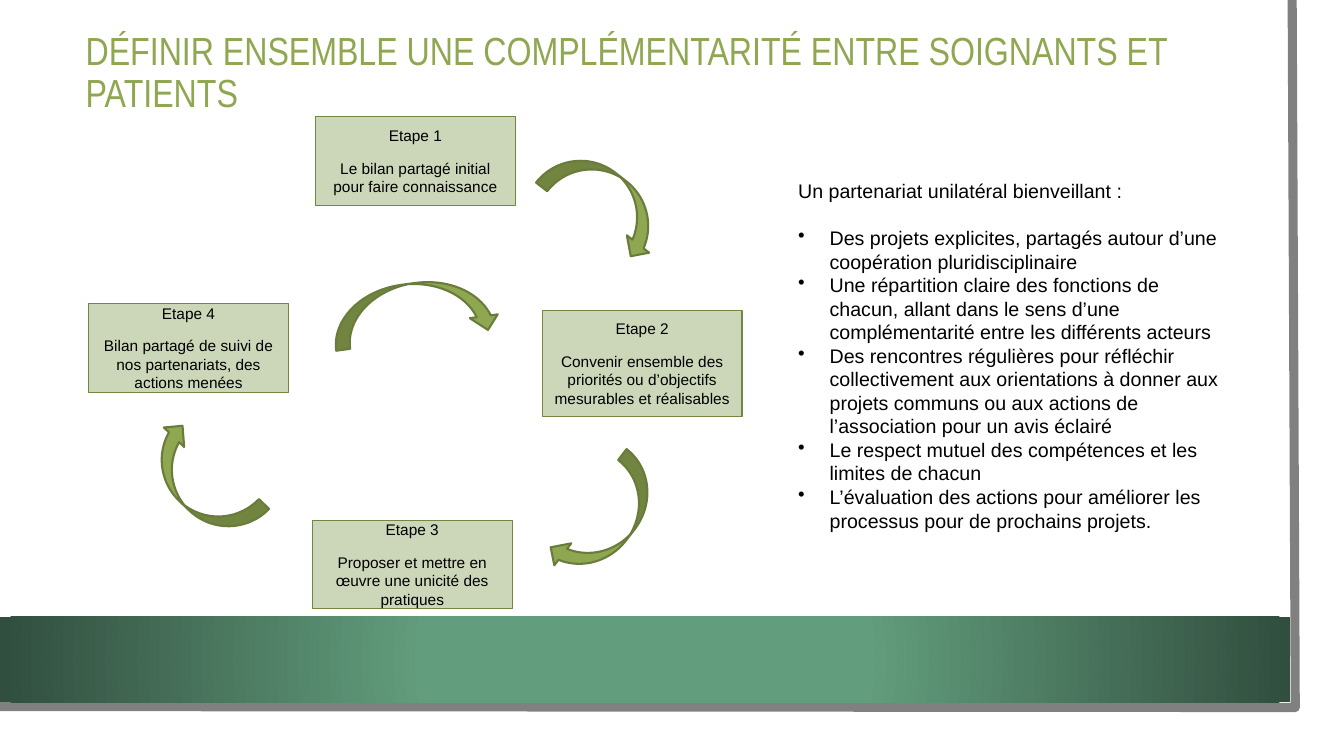
import dataclasses

import pptx
import pptx.dml.color
import pptx.enum.shapes
import pptx.enum.text
import pptx.util
from lxml import etree
from pptx.oxml.ns import qn

Pt = pptx.util.Pt
SHAPES = pptx.enum.shapes.MSO_SHAPE
ALIGN = pptx.enum.text.PP_ALIGN
MIDDLE = pptx.enum.text.MSO_ANCHOR.MIDDLE


@dataclasses.dataclass(frozen=True)
class Theme:
    green: str = "8FA751"
    arrow_line: str = "6A7C3C"
    step_fill: str = "CCD6B9"
    step_line: str = "738641"
    frame: str = "808080"
    band_centre: str = "629D7D"
    band_edge: str = "314E3E"
    text: str = "000000"
    body_font: str = "Arial"
    title_font: str = "Arial Narrow"
    title_size: float = 28
    body_size: float = 14
    step_size: float = 11


THEME = Theme()

TITLE = "DÉFINIR ENSEMBLE UNE COMPLÉMENTARITÉ ENTRE SOIGNANTS ET PATIENTS"
STEP_WIDTH = 142.6
# left, top, height, text
STEPS = [
    (225.4, 83.5, 63.4, "Le bilan partagé initial pour faire connaissance"),
    (387.4, 221.8, 75.6, "Convenir ensemble des priorités ou d’objectifs mesurables et réalisables"),
    (223.2, 371.5, 63.4, "Proposer et mettre en œuvre une unicité des pratiques"),
    (63.4, 216.7, 63.4, "Bilan partagé de suivi de nos partenariats, des actions menées"),
]
# left, top, width, height, rotation
ARROWS = [
    (385.2, 123.8, 95.8, 40.3, 37.9),
    (383.8, 352.1, 98.6, 39.6, 127.7),
    (95.8, 324.7, 95.8, 40.3, 223.8),
    (236.9, 202.3, 119.5, 40.3, 352.2),
]
PARTNERSHIP = "Un partenariat unilatéral bienveillant :"
COMMITMENTS = [
    "Des projets explicites, partagés autour d’une coopération pluridisciplinaire",
    "Une répartition claire des fonctions de chacun, allant dans le sens d’une "
    "complémentarité entre les différents acteurs",
    "Des rencontres régulières pour réfléchir collectivement aux orientations à donner aux "
    "projets communs ou aux actions de l’association pour un avis éclairé",
    "Le respect mutuel des compétences et les limites de chacun",
    "L’évaluation des actions pour améliorer les processus pour de prochains projets.",
]


def rgb(value):
    return pptx.dml.color.RGBColor.from_string(value)


def write_paragraph(paragraph, text, *, size, font=THEME.body_font, color=THEME.text,
                    align=ALIGN.LEFT, before=0, after=0, line_spacing=1.0, bullet=False):
    if bullet:
        properties = paragraph._p.get_or_add_pPr()
        properties.set("marL", str(Pt(22.5)))
        properties.set("indent", str(-Pt(22.5)))
        etree.SubElement(properties, qn("a:buChar")).set("char", "•")
    paragraph.alignment = align
    paragraph.space_before = Pt(before)
    paragraph.space_after = Pt(after)
    paragraph.line_spacing = line_spacing
    run = paragraph.add_run()
    run.text = text
    run.font.name = font
    run.font.size = Pt(size)
    run.font.color.rgb = rgb(color)


def add_box(slide, kind, left, top, width, height, fill, line=None, line_width=0.75):
    shape = slide.shapes.add_shape(kind, Pt(left), Pt(top), Pt(width), Pt(height))
    shape.shadow.inherit = False
    shape.fill.solid()
    shape.fill.fore_color.rgb = rgb(fill)
    if line:
        shape.line.color.rgb = rgb(line)
        shape.line.width = Pt(line_width)
    else:
        shape.line.fill.background()
    return shape


def add_frame(slide):
    """Draw the grey edge along the right and bottom of the slide."""
    builder = slide.shapes.build_freeform(Pt(923), 0)
    builder.add_line_segments([(Pt(925.2), Pt(505.4)), (0, Pt(504.7))], close=False)
    frame = builder.convert_to_shape()
    frame.shadow.inherit = False
    frame.fill.background()
    frame.line.color.rgb = rgb(THEME.frame)
    frame.line.width = Pt(6.5)


def add_band(slide):
    """Draw the bottom band with a gradient spreading from its centre."""
    band = add_box(slide, SHAPES.RECTANGLE, 0, 440.6, 921.6, 61.2, THEME.band_centre)
    band.fill.gradient()
    colors = ((0.34, THEME.band_centre), (1, THEME.band_edge))
    for stop, (position, color) in zip(band.fill.gradient_stops, colors):
        stop.position = position
        stop.color.rgb = rgb(color)
    gradient = band._element.spPr.find(qn("a:gradFill"))
    gradient.remove(gradient.find(qn("a:lin")))
    circle = etree.SubElement(gradient, qn("a:path"), {"path": "circle"})
    sides = dict.fromkeys("ltrb", "50000")
    etree.SubElement(circle, qn("a:fillToRect"), sides)


def add_title(slide):
    title = slide.shapes.title
    title.left, title.top, title.width, title.height = Pt(54), Pt(7.2), Pt(818.6), Pt(90.7)
    title.text_frame.vertical_anchor = MIDDLE
    write_paragraph(title.text_frame.paragraphs[0], TITLE, size=THEME.title_size,
                    font=THEME.title_font, color=THEME.green, line_spacing=0.9)


def add_step(slide, number, left, top, height, text):
    step = add_box(slide, SHAPES.RECTANGLE, left, top, STEP_WIDTH, height,
                   THEME.step_fill, THEME.step_line)
    frame = step.text_frame
    frame.word_wrap = True
    frame.vertical_anchor = MIDDLE
    style = dict(size=THEME.step_size, align=ALIGN.CENTER, after=10)
    write_paragraph(frame.paragraphs[0], f"Etape {number}", **style)
    write_paragraph(frame.add_paragraph(), text, **style)


def add_arrow(slide, left, top, width, height, rotation):
    arrow = add_box(slide, SHAPES.CURVED_DOWN_ARROW, left, top, width, height,
                    THEME.green, THEME.arrow_line, 1.5)
    arrow.rotation = rotation


def add_commitments(slide):
    box = slide.shapes.add_textbox(Pt(563), Pt(124.6), Pt(322.6), Pt(278.6))
    frame = box.text_frame
    frame.word_wrap = True
    write_paragraph(frame.paragraphs[0], PARTNERSHIP, size=THEME.body_size)
    for index, text in enumerate(COMMITMENTS):
        write_paragraph(frame.add_paragraph(), text, size=THEME.body_size,
                        before=0 if index else 16.5, bullet=True)


def main():
    presentation = pptx.Presentation()
    presentation.slide_width, presentation.slide_height = Pt(960), Pt(540)
    slide = presentation.slides.add_slide(presentation.slide_layouts.get_by_name("Title Only"))
    add_frame(slide)
    add_band(slide)
    add_title(slide)
    for number, step in enumerate(STEPS, start=1):
        add_step(slide, number, *step)
    for arrow in ARROWS:
        add_arrow(slide, *arrow)
    add_commitments(slide)
    presentation.save("out.pptx")


if __name__ == "__main__":
    main()
